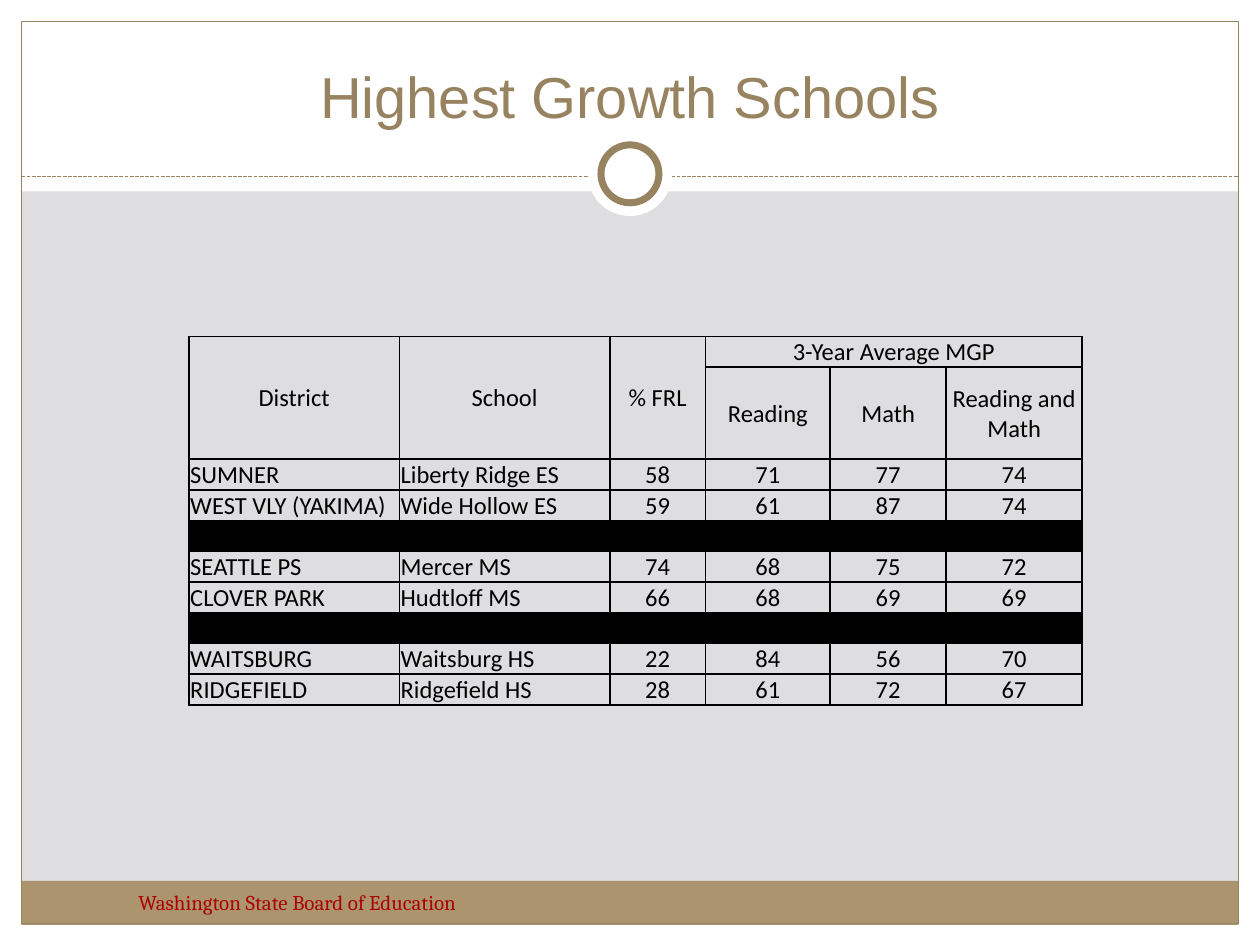
from lxml.etree import SubElement
from pptx import Presentation
from pptx.dml.color import RGBColor
from pptx.enum.dml import MSO_LINE
from pptx.enum.shapes import MSO_CONNECTOR, MSO_SHAPE as SHAPE
from pptx.enum.text import MSO_ANCHOR as ANCHOR, MSO_AUTO_SIZE, PP_ALIGN as ALIGN
from pptx.oxml.ns import qn
from pptx.util import Inches, Pt

WHITE = RGBColor(0xFF, 0xFF, 0xFF)
BLACK = RGBColor(0, 0, 0)
GRAY = RGBColor(0xDE, 0xDE, 0xE0)
TAN = RGBColor(0xAC, 0x95, 0x6E)
BROWN = RGBColor(0x98, 0x83, 0x61)
RED = RGBColor(0xAD, 0x01, 0x01)

W, H = 10, 7.5
MARGIN = 0.17
RULE_Y = 1.4
HEADER_H = 1.52
COLS = [1.67, 1.67, 0.76, 0.99, 0.92, 1.08]
ROW_H, SUBHEAD_H = 0.24, 0.73
HEADS = ["District", "School", "% FRL", "3-Year Average MGP"]
SUBHEADS = ["Reading", "Math", "Reading and Math"]
LEVELS = [
    [("SUMNER", "Liberty Ridge ES", 58, 71, 77, 74),
     ("WEST VLY (YAKIMA)", "Wide Hollow ES", 59, 61, 87, 74)],
    [("SEATTLE PS", "Mercer MS", 74, 68, 75, 72),
     ("CLOVER PARK", "Hudtloff MS", 66, 68, 69, 69)],
    [("WAITSBURG", "Waitsburg HS", 22, 84, 56, 70),
     ("RIDGEFIELD", "Ridgefield HS", 28, 61, 72, 67)],
]
TITLE_FONT = {"name": "Arial", "size": Pt(33)}
FOOTER_FONT = {"name": "Cambria", "size": Pt(12)}
CELL_FONT = {"name": "Calibri", "size": Pt(14)}
CELL = {"margin_left": Inches(0.01), "margin_right": Inches(0.01),
        "margin_top": Inches(0.01), "margin_bottom": 0}


def set_attrs(obj, values):
    for name, value in values.items():
        setattr(obj, name, value)


def write(tf, text, font, color, align=ALIGN.LEFT):
    p = tf.paragraphs[0]
    p.alignment = align
    r = p.add_run()
    r.text = text
    set_attrs(r.font, font)
    r.font.color.rgb = color


def add_shape(s, kind, box, fill=None, line=None, width=0.75):
    sp = s.shapes.add_shape(kind, *map(Inches, box))
    sp.shadow.inherit = False
    for part, color in ((sp.fill, fill), (sp.line.fill, line)):
        if color is None:
            part.background()
        else:
            part.solid()
            part.fore_color.rgb = color
    if line is not None:
        sp.line.width = Pt(width)


def add_frame(s, left, top, width, height):
    right, bottom = left + width, top + height
    for box in ((left, bottom - MARGIN, width, MARGIN),
                (left, top, width, HEADER_H),
                (left, top, MARGIN, height),
                (right - MARGIN, top, MARGIN, height)):
        add_shape(s, SHAPE.RECTANGLE, box, WHITE)
    inner = width - 2 * MARGIN
    add_shape(s, SHAPE.RECTANGLE,
              (left + MARGIN, bottom - 0.51, inner, 0.35), TAN)
    add_shape(s, SHAPE.RECTANGLE,
              (left + MARGIN, top + MARGIN, inner, height - 2 * MARGIN), line=BROWN)


def add_rule(s, left, y, width):
    rule = s.shapes.add_connector(
        MSO_CONNECTOR.STRAIGHT, *map(Inches, (left, y, left + width, y)))
    set_attrs(rule.line, {"width": Pt(0.75), "dash_style": MSO_LINE.SQUARE_DOT})
    rule.line.color.rgb = BROWN
    SubElement(rule._element.spPr, qn("a:effectLst"))
    mid, ring_y = left + width / 2, y - 0.02
    for size, line in ((0.67, None), (0.46, BROWN)):
        box = (mid - size / 2, ring_y - size / 2, size, size)
        add_shape(s, SHAPE.OVAL, box, WHITE, line, 4)


def add_title(s, left, top, width, height):
    title = s.shapes.title
    set_attrs(title, {"left": Inches(left), "top": Inches(top),
                      "width": Inches(width), "height": Inches(height)})
    set_attrs(title.text_frame, {"vertical_anchor": ANCHOR.BOTTOM,
                                 "auto_size": MSO_AUTO_SIZE.NONE})
    write(title.text_frame, "Highest Growth Schools", TITLE_FONT, BROWN, ALIGN.CENTER)
    s.shapes._spTree.append(title._element)


def add_footer(s, left, top, width, height):
    tf = s.shapes.add_textbox(*map(Inches, (left, top, width, height))).text_frame
    tf.word_wrap = True
    write(tf, "Washington State Board of Education", FOOTER_FONT, RED)


def add_borders(cell):
    tcPr = cell._tc.get_or_add_tcPr()
    for i, side in enumerate(("lnL", "lnR", "lnT", "lnB")):
        ln = tcPr.makeelement(qn(f"a:{side}"), {"w": str(Pt(1))})
        tcPr.insert(i, ln)
        fill = SubElement(ln, qn("a:solidFill"))
        SubElement(fill, qn("a:srgbClr"), val=str(BLACK))


def fill_cell(cell, text, align, anchor):
    cell.vertical_anchor = anchor
    write(cell.text_frame, str(text), CELL_FONT, BLACK, align)


def add_schools(s, left, top):
    rows = []
    for level in LEVELS:
        rows += ([None] if rows else []) + level
    heights = [ROW_H, SUBHEAD_H] + [ROW_H] * len(rows)
    box = map(Inches, (left, top, sum(COLS), sum(heights)))
    table = s.shapes.add_table(len(heights), len(COLS), *box).table
    set_attrs(table, {"first_row": False, "horz_banding": False})
    for col, width in zip(table.columns, COLS):
        col.width = Inches(width)
    for row, height in zip(table.rows, heights):
        row.height = Inches(height)
    for cell in table.iter_cells():
        set_attrs(cell, CELL)
        cell.fill.background()
        add_borders(cell)
    for c in range(3):
        table.cell(0, c).merge(table.cell(1, c))
    table.cell(0, 3).merge(table.cell(0, 5))
    for c, head in enumerate(HEADS):
        anchor = ANCHOR.MIDDLE if c < 3 else ANCHOR.BOTTOM
        fill_cell(table.cell(0, c), head, ALIGN.CENTER, anchor)
    for c, head in enumerate(SUBHEADS, 3):
        fill_cell(table.cell(1, c), head, ALIGN.CENTER, ANCHOR.MIDDLE)
    for r, row in enumerate(rows, 2):
        for c in range(len(COLS)):
            cell = table.cell(r, c)
            if row:
                align = ALIGN.LEFT if c < 2 else ALIGN.CENTER
                fill_cell(cell, row[c], align, ANCHOR.BOTTOM)
            else:
                cell.fill.solid()
                cell.fill.fore_color.rgb = BLACK
                p = cell.text_frame.paragraphs[0]
                SubElement(p._p, qn("a:endParaRPr"), sz="1400")


def main():
    prs = Presentation()
    prs.slide_width, prs.slide_height = Inches(W), Inches(H)
    s = prs.slides.add_slide(prs.slide_layouts[5])
    s.background.fill.solid()
    s.background.fill.fore_color.rgb = GRAY
    add_frame(s, 0, 0, W, H)
    add_rule(s, MARGIN, RULE_Y, W - 2 * MARGIN)
    add_title(s, W / 30, H / 30, W * 14 / 15, H / 9)
    add_footer(s, W / 10, 7.01, 3.92, 0.4)
    add_schools(s, W * 0.15, 2.67)
    prs.save("out.pptx")


if __name__ == "__main__":
    main()
